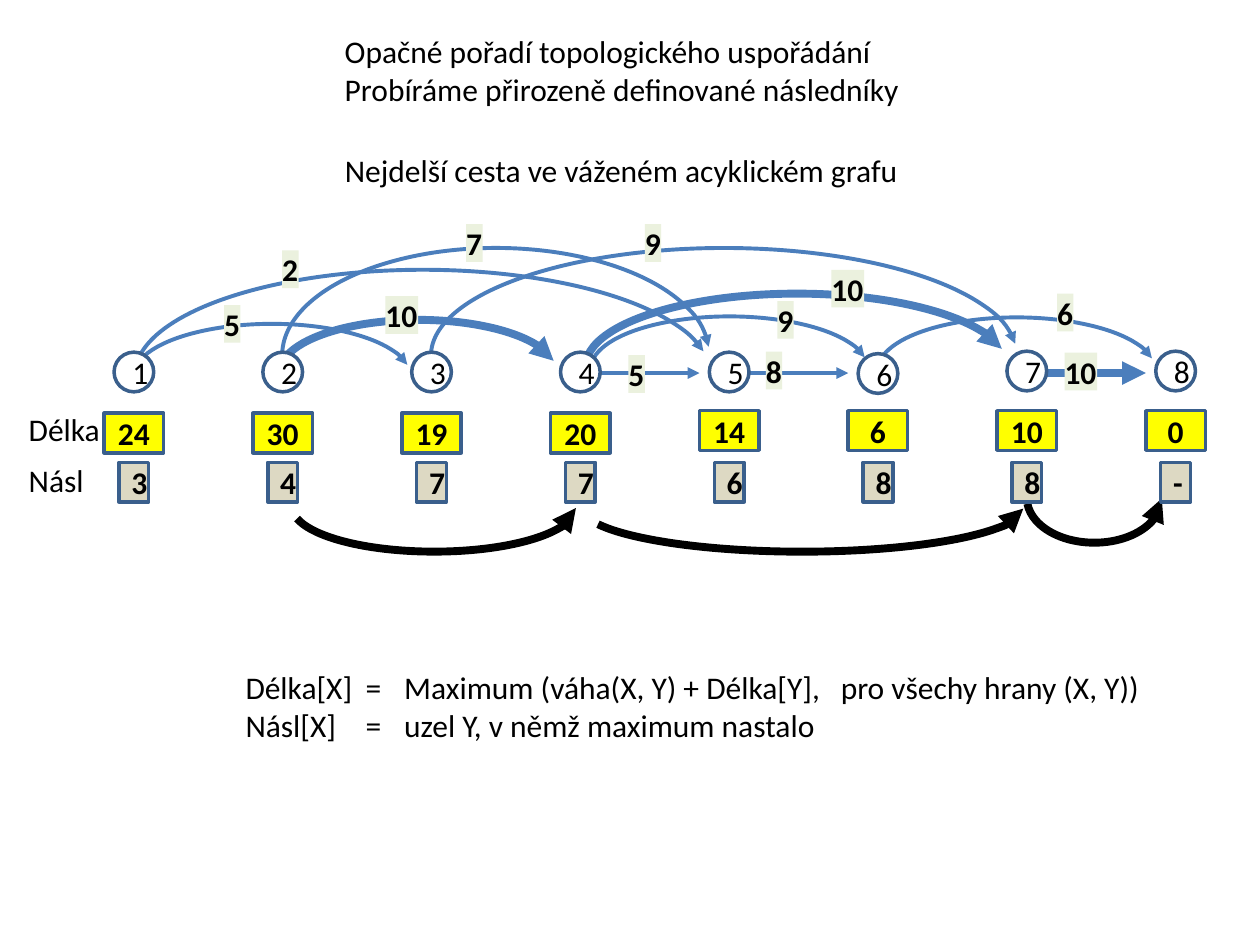
import pptx
import pptx.util
import pptx.dml.color
import pptx.enum.shapes
import pptx.enum.text
import pptx.oxml.ns
import lxml.etree

Cm = pptx.util.Cm
Pt = pptx.util.Pt
qn = pptx.oxml.ns.qn
KIND = pptx.enum.shapes.MSO_SHAPE
ALIGN = pptx.enum.text.PP_ALIGN
ANCHOR = pptx.enum.text.MSO_ANCHOR

BLUE, EDGE, BLACK = "4B7EBC", "3A5F8C", "000000"
FIRST, STEP = 2.7, 3  # centre of node 1 and distance between nodes


def paint(part, fill=None, line=None, width=2, end=None):
    """Set fill, outline and an optional arrowhead (headEnd or tailEnd)."""
    if hasattr(part, "fill"):
        part.shadow.inherit = False
        if fill:
            part.fill.solid()
            part.fill.fore_color.rgb = pptx.dml.color.RGBColor.from_string(fill)
        else:
            part.fill.background()
    if line:
        part.line.color.rgb = pptx.dml.color.RGBColor.from_string(line)
        part.line.width = Pt(width)
    else:
        part.line.fill.background()
    if end:
        ln = part.element.spPr.find(qn("a:ln"))
        lxml.etree.SubElement(ln, qn("a:" + end), type="triangle")


def write(part, text, bold=False, align=ALIGN.LEFT, anchor=ANCHOR.TOP, wrap=False):
    """Fill a shape with black 18 pt text."""
    frame = part.text_frame
    frame.text = text
    frame.word_wrap = wrap
    frame.auto_size = pptx.enum.text.MSO_AUTO_SIZE.NONE
    frame.vertical_anchor = anchor
    for para in frame.paragraphs:
        para.alignment = align
        for run in para.runs:
            run.font.name = "Calibri"
            run.font.size = Pt(18)
            run.font.bold = bold
            run.font.color.rgb = pptx.dml.color.RGBColor.from_string(BLACK)


deck = pptx.Presentation()
deck.slide_width, deck.slide_height = Cm(25.4), Cm(19.05)
slide = deck.slides.add_slide(deck.slide_layouts[5])
shapes = slide.shapes

# Title
title = shapes.title
title.left, title.top, title.width, title.height = Cm(6.7), Cm(2.92), Cm(11.8), Cm(1.02)
write(title, "Nejdelší cesta ve váženém acyklickém grafu")

# Curved edges above the nodes, then the longest path below them
edges = [
    (2.69, 6.53, 5.59, 2.11, 2.25),
    (2.72, 5.44, 11.61, 4.24, 2.25),
    (5.69, 5, 8.61, 4.32, 2.25),
    (17.7, 6.4, 5.59, 2.11, 2.25),
    (11.91, 6.38, 5.59, 2.11, 2.25),
    (8.69, 5, 11.81, 4.32, 2.25),
    (11.81, 5.92, 8.51, 2.92, 4.5),
    (5.64, 6.45, 5.59, 2.11, 4.5),
]
route = [
    (20.7, 9.14, 2.72, 1.8, 4.5),
    (11.71, 9.32, 8.92, 1.8, 4.5),
    (5.89, 9.32, 5.72, 1.8, 4.5),
]
for arcs, color, end, turn in ((edges, BLUE, "tailEnd", 0), (route, BLACK, "headEnd", 180)):
    for x, y, w, h, width in arcs:
        arc = shapes.add_shape(KIND.ARC, Cm(x), Cm(y), Cm(w), Cm(h))
        arc.adjustments[0] = 108.25
        arc.adjustments[1] = 213.11 if h < 4.3 else 214.65
        arc.rotation = turn
        paint(arc, line=color, width=width, end=end)

# Straight edges to the next node
for node, width in ((4, 2.25), (5, 2.25), (7, 4.5)):
    x = FIRST + STEP * (node - 1)
    edge = shapes.add_connector(pptx.enum.shapes.MSO_CONNECTOR.STRAIGHT,
                                Cm(x + 0.4), Cm(7.52), Cm(x + 2.4), Cm(7.52))
    paint(edge, line=BLUE, width=width, end="tailEnd")
    lxml.etree.SubElement(edge.element.spPr, qn("a:effectLst"))

# Nodes with their length and successor
rows = [
    (KIND.OVAL, 0.8, "FFFFFF", False, "1 2 3 4 5 6 7 8",
     [7.1] * 5 + [7.13] + [7.08] * 2),
    (KIND.RECTANGLE, 1.2, "FFFF00", True, "24 30 19 20 14 6 10 0",
     [8.33] * 4 + [8.28] * 4),
    (KIND.RECTANGLE, 0.6, "DDD9C3", True, "3 4 7 7 6 8 8 -", [9.32] * 8),
]
for kind, w, fill, bold, words, tops in rows:
    for i, (word, y) in enumerate(zip(words.split(), tops)):
        x = FIRST + STEP * i - w / 2
        box = shapes.add_shape(kind, Cm(x), Cm(y), Cm(w), Cm(0.8))
        paint(box, fill, EDGE)
        write(box, word, bold, ALIGN.CENTER, ANCHOR.MIDDLE, wrap=True)

# Edge weights
weights = [
    ("2", 5.69, 5.05), ("10", 7.77, 5.97), ("7", 9.4, 4.52), ("9", 13, 4.52),
    ("6", 21.31, 5.92), ("10", 16.76, 5.44), ("9", 15.67, 6.07), ("8", 15.44, 7.09),
    ("5", 12.67, 7.16), ("10", 21.46, 7.11), ("5", 4.52, 6.15),
]
for word, x, y in weights:
    tag = shapes.add_shape(KIND.RECTANGLE, Cm(x), Cm(y), Cm(0.33 * len(word)), Cm(0.76))
    paint(tag, "EBF1DE")
    write(tag, word, bold=True, anchor=ANCHOR.MIDDLE)
    frame = tag.text_frame
    frame.margin_left = frame.margin_right = frame.margin_top = frame.margin_bottom = 0

# Row names, intro and formulas
notes = [
    ("Délka", 0.33, 8.15, 1.96, 1.02),
    ("Násl", 0.33, 9.17, 1.63, 1.02),
    ("Opačné pořadí topologického uspořádání\n"
     "Probíráme přirozeně definované následníky", 6.7, 0.53, 11.8, 1.8),
    ("Délka[X]\t=\tMaximum (váha(X, Y) + Délka[Y],\tpro všechy hrany (X, Y))\n"
     "Násl[X]\t=\tuzel Y, v němž maximum nastalo", 4.7, 13.34, 19, 2.57),
]
for text, x, y, w, h in notes:
    note = shapes.add_textbox(Cm(x), Cm(y), Cm(w), Cm(h))
    write(note, text, wrap="\t" in text)

# Tab stops of the formulas, the last text box
for para in note.text_frame.paragraphs:
    tabs = lxml.etree.SubElement(para._p.get_or_add_pPr(), qn("a:tabLst"))
    for stop in (2.42, 3.2, 12):
        lxml.etree.SubElement(tabs, qn("a:tab"), pos=str(Cm(stop)), algn="l")

deck.save("out.pptx")
